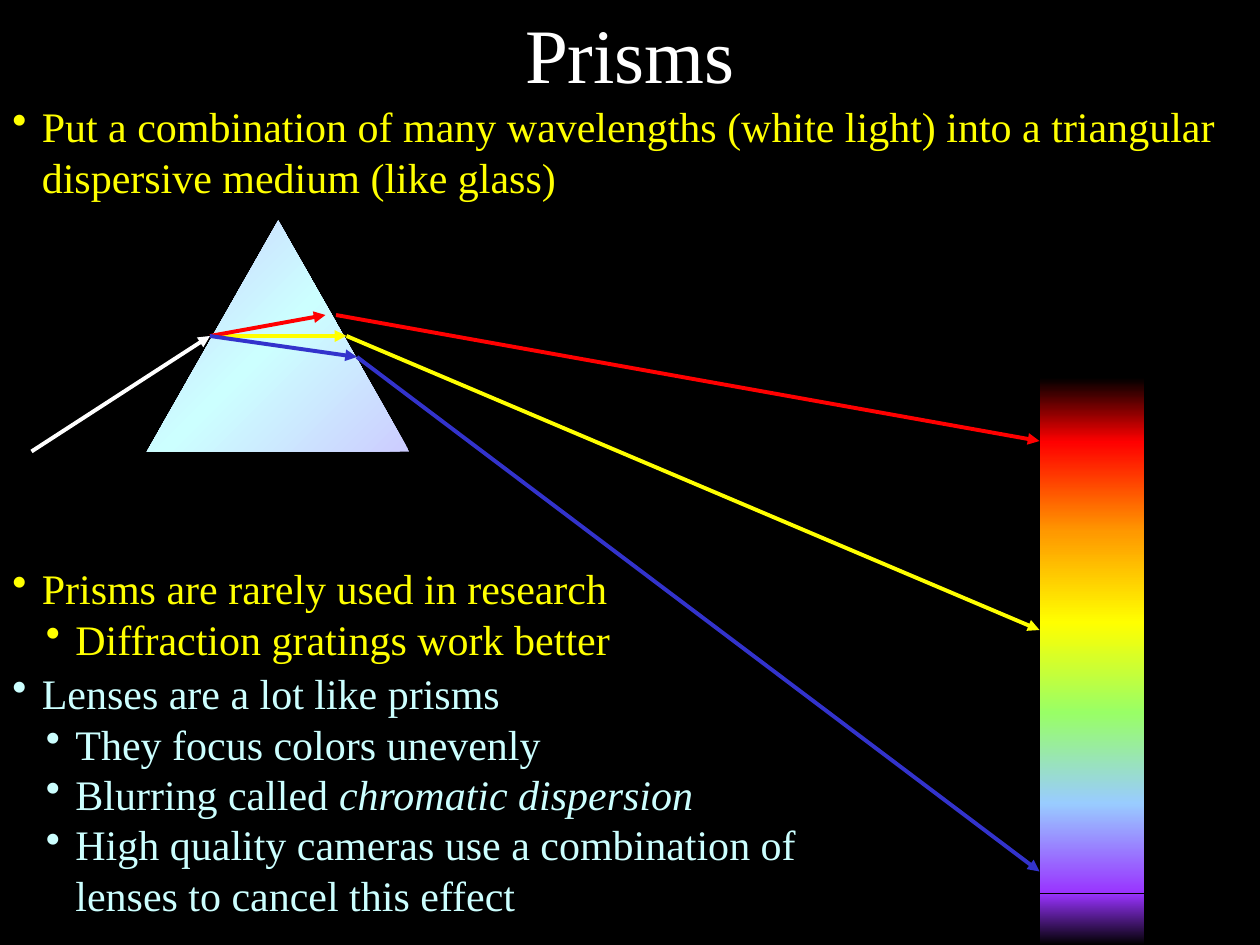
from copy import deepcopy

from lxml import etree
from pptx import Presentation
from pptx.dml.color import RGBColor
from pptx.enum.shapes import MSO_CONNECTOR, MSO_SHAPE
from pptx.enum.text import MSO_ANCHOR, MSO_AUTO_SIZE, PP_ALIGN
from pptx.oxml.ns import qn
from pptx.util import Pt

LINE = MSO_CONNECTOR.STRAIGHT
RECT = MSO_SHAPE.RECTANGLE
PRISM = MSO_SHAPE.ISOSCELES_TRIANGLE
TOP = MSO_ANCHOR.TOP
GROW = MSO_AUTO_SIZE.SHAPE_TO_FIT_TEXT
LEFT = PP_ALIGN.LEFT
CENTER = PP_ALIGN.CENTER

BLACK = RGBColor(0x00, 0x00, 0x00)
WHITE = RGBColor(0xFF, 0xFF, 0xFF)
YELLOW = RGBColor(0xFF, 0xFF, 0x00)
RED = RGBColor(0xFF, 0x00, 0x00)
BLUE = RGBColor(0x33, 0x33, 0xCC)
ORANGE = RGBColor(0xFF, 0x99, 0x00)
GREEN = RGBColor(0x99, 0xFF, 0x66)
SKY = RGBColor(0x99, 0xCC, 0xFF)
VIOLET = RGBColor(0x99, 0x33, 0xFF)
CYAN = RGBColor(0xCC, 0xFF, 0xFF)
LILAC = RGBColor(0xCC, 0xCC, 0xFF)

FONT = "Times New Roman"
HANG = 16.8
INDENTS = (HANG, 36)


def add_bullet(para, level):
    props = para._p.get_or_add_pPr()
    props.set("marL", str(Pt(INDENTS[level])))
    props.set("indent", str(-Pt(HANG)))
    etree.SubElement(props, qn("a:buChar")).set("char", "•")
    para.level = level


def write(shape, items, size=24, color=YELLOW, align=LEFT, bullets=True):
    """Each item is (level, plain text, optional italic text)."""
    frame = shape.text_frame
    frame.word_wrap = True
    frame.auto_size = GROW
    frame.vertical_anchor = TOP
    frame.margin_left = frame.margin_right = Pt(7.2)
    frame.margin_top = frame.margin_bottom = Pt(3.6)
    for i, (level, *parts) in enumerate(items):
        para = frame.add_paragraph() if i else frame.paragraphs[0]
        if bullets:
            add_bullet(para, level)
        para.alignment = align
        para.line_spacing = Pt(1.2 * size)
        para.space_before = Pt(0)
        for n, text in enumerate(parts):
            run = para.add_run()
            run.text = text
            font = run.font
            font.name = FONT
            font.size = Pt(size)
            font.color.rgb = color
            font.italic = n == 1


def add_title(slide, box):
    title = slide.shapes.title
    title.left, title.top, title.width, title.height = map(Pt, box)
    write(title, [(0, "Prisms")], size=44, color=WHITE, align=CENTER,
          bullets=False)


def add_list(slide, box, items, color=YELLOW):
    write(slide.shapes.add_textbox(*map(Pt, box)), items, color=color)


def add_blend(shapes, kind, box, colors, angle):
    """Add a shape whose gradient has evenly spaced colours."""
    shape = shapes.add_shape(kind, *map(Pt, box))
    shape.shadow.inherit = False
    shape.line.fill.background()
    fill = shape.fill
    fill.gradient()
    fill.gradient_angle = angle
    stops = shape._element.spPr.find(".//" + qn("a:gsLst"))
    for _ in colors[2:]:
        stops.append(deepcopy(stops[-1]))
    for i, (stop, color) in enumerate(zip(fill.gradient_stops, colors)):
        stop.color.rgb = color
        stop.position = i / (len(colors) - 1)


def add_ray(shapes, start, end, color):
    ray = shapes.add_connector(LINE, *map(Pt, start + end))
    ray.line.color.rgb = color
    ray.line.width = Pt(2.25)
    head = etree.SubElement(ray.line._get_or_add_ln(), qn("a:tailEnd"))
    head.set("type", "triangle")
    etree.SubElement(ray._element.spPr, qn("a:effectLst"))


def add_optics(slide, box, screen):
    """Draw the prism in its box and the rays up to the screen's x."""
    left, top, width, height = box
    add_blend(slide.shapes, PRISM, box, (LILAC, CYAN, LILAC), 315)
    entry = (left + 36, top + 66)
    add_ray(slide.shapes, (left - 66, top + height), entry, WHITE)
    # colour, exit from glass, start in air, y on screen (relative to box)
    paths = (
        (YELLOW, (114, 66), (114, 66), 234),
        (RED, (102, 54), (108, 54), 126),
        (BLUE, (120, 78), (120, 78), 372),
    )
    for color, inner, outer, drop in paths:
        group = slide.shapes.add_group_shape().shapes
        add_ray(group, entry, (left + inner[0], top + inner[1]), color)
        add_ray(group, (left + outer[0], top + outer[1]),
                (screen, top + drop), color)


def add_spectrum(slide, box):
    left, top, width, height = box
    colors = (BLACK, RED, ORANGE, YELLOW, GREEN, SKY, VIOLET, BLACK)
    first, step = 36.6, 51.6
    edges = [top] + [top + first + step * i for i in range(6)]
    edges.append(top + height)
    group = slide.shapes.add_group_shape().shapes
    for i in range(len(colors) - 1):
        band = (left, edges[i], width, edges[i + 1] - edges[i])
        add_blend(group, RECT, band, colors[i:i + 2], 270)


def main():
    deck = Presentation()
    deck.slide_width, deck.slide_height = Pt(720), Pt(540)
    slide = deck.slides.add_slide(deck.slide_layouts[5])
    back = slide.background.fill
    back.solid()
    back.fore_color.rgb = BLACK

    add_title(slide, (0, 0, 720, 60))
    add_list(slide, (0, 54, 714, 64.8), [
        (0, "Put a combination of many wavelengths (white light) into a "
            "triangular dispersive medium (like glass)"),
    ])
    add_optics(slide, (84, 126, 150, 132), 594)
    add_spectrum(slide, (594, 216, 60, 324))
    add_list(slide, (0, 318, 366, 64.8), [
        (0, "Prisms are rarely used in research"),
        (1, "Diffraction gratings work better"),
    ])
    add_list(slide, (0, 378, 480, 151.2), [
        (0, "Lenses are a lot like prisms"),
        (1, "They focus colors unevenly"),
        (1, "Blurring called ", "chromatic dispersion"),
        (1, "High quality cameras use a combination of lenses to cancel "
            "this effect"),
    ], color=CYAN)
    deck.save("out.pptx")


if __name__ == "__main__":
    main()
